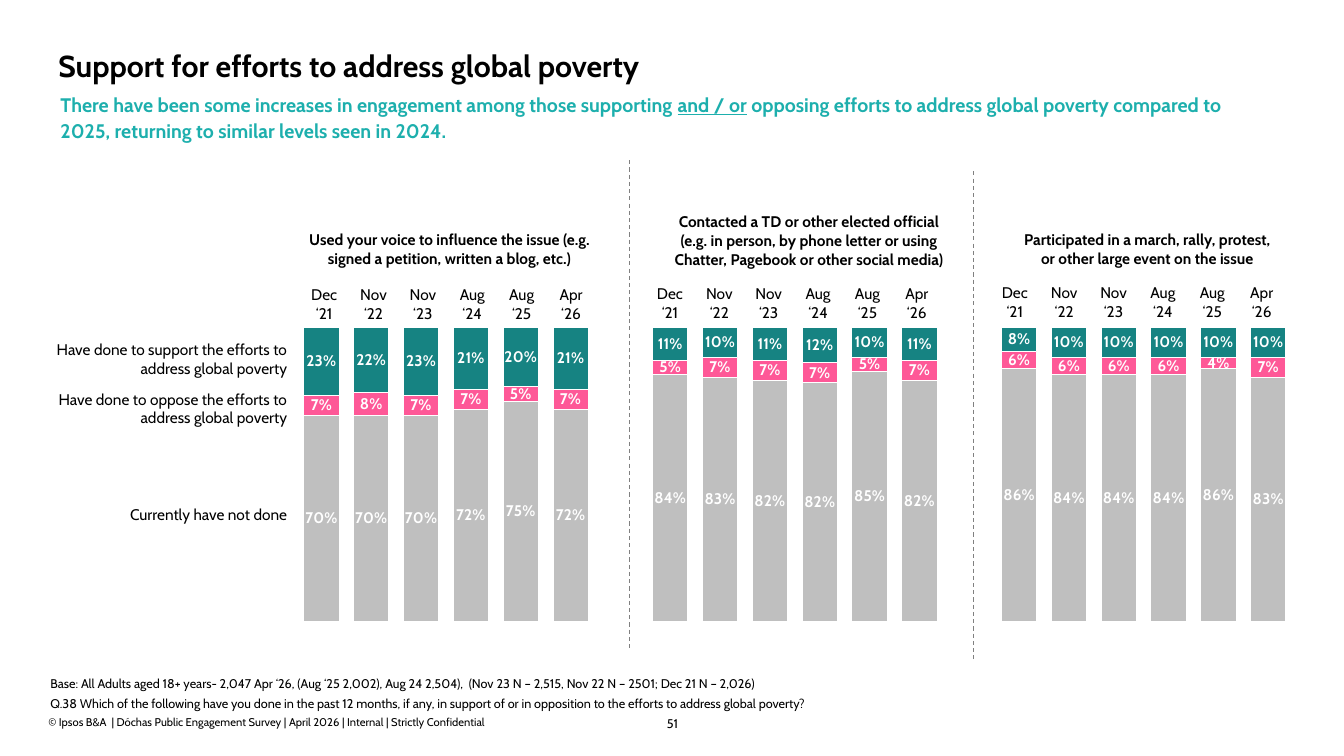
from lxml import etree
from pptx import Presentation
from pptx.chart.data import CategoryChartData
from pptx.dml.color import RGBColor
from pptx.enum import chart as charts, dml, shapes, text
from pptx.oxml import parse_xml
from pptx.oxml.ns import nsdecls, qn
from pptx.util import Inches, Pt

FONT = "Cabin"
BLACK, WHITE, TEAL = "000000", "FFFFFF", "1DAFAD"
LEFT, CENTER, RIGHT = text.PP_ALIGN.LEFT, text.PP_ALIGN.CENTER, text.PP_ALIGN.RIGHT
TOP, MIDDLE, BOTTOM = text.MSO_ANCHOR.TOP, text.MSO_ANCHOR.MIDDLE, text.MSO_ANCHOR.BOTTOM


def write(holder, words, size=11, color=BLACK, bold=False, align=LEFT, anchor=TOP,
          insets=(0, 0, 0, 0), spacing=1.0, after=0, underlined=None):
    """Write one paragraph per line of words into a text box or a table cell."""
    frame = holder.text_frame
    frame.word_wrap = True
    holder_format = frame if hasattr(frame, "auto_size") and not hasattr(holder, "is_spanned") else holder
    holder_format.vertical_anchor = anchor
    (holder_format.margin_left, holder_format.margin_top,
     holder_format.margin_right, holder_format.margin_bottom) = map(Inches, insets)
    for number, line in enumerate(words.split("\n")):
        paragraph = frame.add_paragraph() if number else frame.paragraphs[0]
        paragraph.alignment = align
        paragraph.line_spacing = spacing
        paragraph.space_after = Pt(after)
        for part in line.partition(underlined) if underlined else [line]:
            run = paragraph.add_run()
            run.text = part
            run.font.name = FONT
            run.font.size = Pt(size)
            run.font.bold = bold
            run.font.underline = part == underlined
            run.font.color.rgb = RGBColor.from_string(color)


def add_grid(left, top, widths, heights, words, **style):
    """Add an unfilled table; words run row by row."""
    table = slide.shapes.add_table(
        len(heights), len(widths), Inches(left), Inches(top),
        Inches(sum(widths)), Inches(sum(heights))).table
    table.first_row = table.horz_banding = False
    for column, width in zip(table.columns, widths):
        column.width = Inches(width)
    for row, height in zip(table.rows, heights):
        row.height = Inches(height)
    for cell, entry in zip(table.iter_cells(), words):
        cell.fill.background()
        write(cell, entry, **style)


prs = Presentation()
prs.slide_width, prs.slide_height = Inches(13.33), Inches(7.5)
slide = prs.slides.add_slide(prs.slide_layouts[6])

# Title, finding and footer
for box, words, style in [
    ((6.4, 7.09, 0.54, 0.15), "51", dict(size=9, align=CENTER, spacing=1.1)),
    ((0.48, 7.1, 6.1, 0.13),
     "© Ipsos B&A  | Dóchas Public Engagement Survey | April 2026 | Internal | Strictly Confidential",
     dict(size=8, anchor=BOTTOM)),
    ((0.48, 0.46, 12.34, 0.45), "Support for efforts to address global poverty",
     dict(size=21.6, bold=True, insets=(0.1, 0.05, 0.1, 0.05), spacing=0.9)),
    ((0.6, 0.9, 11.82, 0.8),
     "There have been some increases in engagement among those supporting and / or opposing efforts "
     "to address global poverty compared to 2025, returning to similar levels seen in 2024.",
     dict(size=14, color=TEAL, bold=True, spacing=1.1, underlined="and / or")),
    ((0.5, 6.68, 10.22, 0.36),
     "Base: All Adults aged 18+ years- 2,047 Apr ‘26, (Aug ‘25 2,002), Aug 24 2,504),  "
     "(Nov 23 N – 2,515, Nov 22 N – 2501; Dec 21 N – 2,026)\n"
     "Q.38 Which of the following have you done in the past 12 months, if any, in support of "
     "or in opposition to the efforts to address global poverty?",
     dict(size=9, spacing=1.15, after=2)),
]:
    write(slide.shapes.add_textbox(*map(Inches, box)), words, **style)

# Answer labels beside the bars
add_grid(0.36, 3.26, [2.5], [0.6, 0.38, 1.72],
         ["Have done to support the efforts to address global poverty",
          "Have done to oppose the efforts to address global poverty",
          "Currently have not done"],
         align=RIGHT, anchor=MIDDLE, insets=(0.01, 0.01, 0.01, 0))

# Three groups of six waves, parted by an empty category
answers = [
    ("Series 1", "168382", [23, 22, 23, 21, 20, 21, None, 11, 10, 11, 12, 10, 11, None, 8, 10, 10, 10, 10, 10]),
    ("Series 2", "FE5897", [7, 8, 7, 7, 5, 7, None, 5, 7, 7, 7, 5, 7, None, 6, 6, 6, 6, 4, 7]),
    ("Series 3", "BFBFBF", [70, 70, 70, 72, 75, 72, None, 84, 83, 82, 82, 85, 82, None, 86, 84, 84, 84, 86, 83]),
]
data = CategoryChartData()
data.categories = [str(number) for number in range(1, 21)]
for name, color, values in answers:
    data.add_series(name, values)
chart = slide.shapes.add_chart(
    charts.XL_CHART_TYPE.COLUMN_STACKED_100, Inches(2.81), Inches(3.12),
    Inches(10.16), Inches(3.58), data).chart
chart.has_legend = chart.has_title = False
chart.font.name, chart.font.size, chart.font.bold = FONT, Pt(14), True
chart.font.color.rgb = RGBColor.from_string(WHITE)
chart.category_axis.visible = chart.value_axis.visible = False
chart.value_axis.has_major_gridlines = False
chart.value_axis.reverse_order = True
bars = chart.plots[0]
bars.gap_width, bars.overlap, bars.vary_by_categories = 41, 100, False
for series, (name, color, values) in zip(bars.series, answers):
    series.format.fill.solid()
    series.format.fill.fore_color.rgb = RGBColor.from_string(color)
    series.format.line.color.rgb = RGBColor.from_string(WHITE)
    series.format.line.width = Pt(0.75)
    labels = series.data_labels
    labels.show_value = True
    labels.number_format, labels.number_format_is_linked = '#"%"', False
    labels.font.name, labels.font.size, labels.font.bold = FONT, Pt(11), True
    labels.font.color.rgb = RGBColor.from_string(WHITE)

plot_area = chart.element.find(".//" + qn("c:plotArea"))
for old_layout in plot_area.findall(qn("c:layout")):
    plot_area.remove(old_layout)
layout_parts = [("layoutTarget", "inner"), ("xMode", "edge"), ("yMode", "edge"),
                ("x", 0.013), ("y", 0.037), ("w", 0.973), ("h", 0.813)]
settings = "".join(f'<c:{tag} val="{value}"/>' for tag, value in layout_parts)
plot_area.insert(0, parse_xml(
    f'<c:layout {nsdecls("c")}><c:manualLayout>{settings}</c:manualLayout></c:layout>'))

# Headings above the groups
add_grid(2.85, 1.96, [3.22, 0.43, 3.05, 0.39, 2.88], [0.85],
         ["Used your voice to influence the issue (e.g. signed a petition, written a blog, etc.)", "",
          "Contacted a TD or other elected official (e.g. in person, by phone letter or using "
          "Chatter, Pagebook or other social media)", "",
          "Participated in a march, rally, protest, or other large event on the issue"],
         bold=True, align=CENTER, anchor=BOTTOM, insets=(0.15, 0.15, 0.15, 0.15))

for x, top in [(6.24, 1.59), (9.66, 1.7)]:
    divider = slide.shapes.add_connector(
        shapes.MSO_CONNECTOR.STRAIGHT, Inches(x), Inches(top), Inches(x), Inches(top + 4.84))
    divider.line.color.rgb = RGBColor.from_string("808080")
    divider.line.width = Pt(0.75)
    divider.line.dash_style = dml.MSO_LINE.DASH
    etree.SubElement(divider.element.spPr, qn("a:effectLst"))

waves = ["Dec ‘21", "Nov ‘22", "Nov ‘23", "Aug ‘24", "Aug ‘25", "Apr ‘26"]
for left, top in [(2.97, 2.78), (6.4, 2.77), (9.82, 2.76)]:
    add_grid(left, top, [0.49] * len(waves), [0.47], waves,
             align=CENTER, insets=(0.1, 0.05, 0.1, 0.05))

prs.save("out.pptx")
